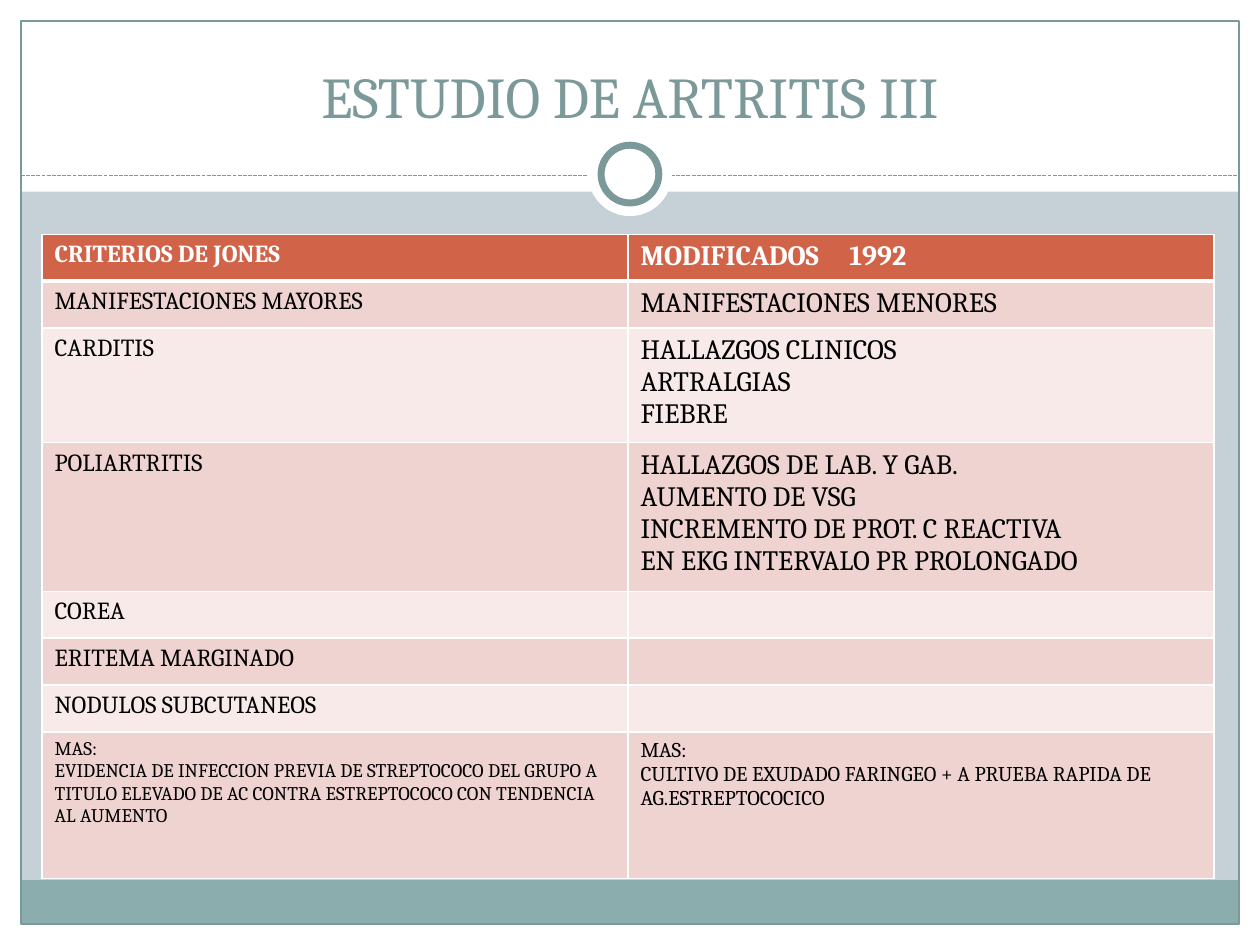
from lxml.etree import SubElement
from pptx import Presentation
from pptx.dml.color import RGBColor
from pptx.enum.dml import MSO_LINE
from pptx.enum.shapes import MSO_CONNECTOR, MSO_SHAPE
from pptx.enum.text import MSO_ANCHOR, PP_ALIGN
from pptx.oxml.ns import qn
from pptx.util import Pt


def paint(color_format, hex_color):
    color_format.rgb = RGBColor.from_string(hex_color)


def draw_border(cell, side, width):
    edge = SubElement(cell._tc.get_or_add_tcPr(), qn(f"a:ln{side}"), w=str(Pt(width)))
    fill = SubElement(edge, qn("a:solidFill"))
    SubElement(fill, qn("a:srgbClr"), val="FFFFFF")


FONT = "Cambria"
TEAL = "7C999A"
WHITE = "FFFFFF"

prs = Presentation()
prs.slide_width, prs.slide_height = Pt(720), Pt(540)
slide = prs.slides.add_slide(prs.slide_layouts[5])
slide.background.fill.solid()
paint(slide.background.fill.fore_color, "C5D1D7")

backdrop = [
    (MSO_SHAPE.RECTANGLE, 0, 528, 720, 12, WHITE, None, 0),
    (MSO_SHAPE.RECTANGLE, 0, 0, 720, 109.5, WHITE, None, 0),
    (MSO_SHAPE.RECTANGLE, 0, 0, 12, 540, WHITE, None, 0),
    (MSO_SHAPE.RECTANGLE, 708, 0, 12, 540, WHITE, None, 0),
    (MSO_SHAPE.RECTANGLE, 12, 503, 696, 25, "8CADAE", None, 0),
    (MSO_SHAPE.RECTANGLE, 12, 12, 696, 516, None, TEAL, 0.75),
]
medallion = [
    (MSO_SHAPE.OVAL, 336, 75.5, 48, 48, WHITE, None, 0),
    (MSO_SHAPE.OVAL, 343.5, 83, 33, 33, WHITE, TEAL, 4),
]
for kind, left, top, width, height, fill, outline, weight in backdrop + medallion:
    if (kind, left) == (MSO_SHAPE.OVAL, 336):
        divider = slide.shapes.add_connector(
            MSO_CONNECTOR.STRAIGHT, Pt(12), Pt(100.5), Pt(708), Pt(100.5))
        paint(divider.line.color, TEAL)
        divider.line.width = Pt(0.75)
        divider.line.dash_style = MSO_LINE.SQUARE_DOT
        SubElement(divider.element.spPr, qn("a:effectLst"))
    part = slide.shapes.add_shape(kind, Pt(left), Pt(top), Pt(width), Pt(height))
    part.shadow.inherit = False
    if fill:
        part.fill.solid()
        paint(part.fill.fore_color, fill)
    else:
        part.fill.background()
    if outline:
        paint(part.line.color, outline)
        part.line.width = Pt(weight)
    else:
        part.line.fill.background()

title = slide.shapes.title
slide.shapes.element.append(title.element)
title_box = {"left": Pt(24), "top": Pt(18), "width": Pt(672), "height": Pt(60)}
for name, value in title_box.items():
    setattr(title, name, value)
title.text_frame.text = "ESTUDIO DE ARTRITIS III"
title.text_frame.vertical_anchor = MSO_ANCHOR.BOTTOM
heading = title.text_frame.paragraphs[0]
heading.alignment = PP_ALIGN.CENTER
for name, value in {"name": FONT, "size": Pt(33), "bold": False}.items():
    setattr(heading.runs[0].font, name, value)
paint(heading.runs[0].font.color, TEAL)

criteria = [
    (26.7, "CRITERIOS DE JONES", "MODIFICADOS\t1992"),
    (26.7, "MANIFESTACIONES MAYORES", "MANIFESTACIONES MENORES"),
    (65.6, "CARDITIS", "HALLAZGOS CLINICOS\nARTRALGIAS\nFIEBRE"),
    (85, "POLIARTRITIS", "HALLAZGOS DE LAB. Y GAB.\nAUMENTO DE VSG\n"
     "INCREMENTO DE PROT. C REACTIVA\nEN EKG INTERVALO PR PROLONGADO"),
    (26.7, "COREA", ""),
    (26.7, "ERITEMA MARGINADO", ""),
    (26.7, "NODULOS SUBCUTANEOS", ""),
    (83.8, "MAS:\nEVIDENCIA DE INFECCION PREVIA DE STREPTOCOCO DEL GRUPO A\n"
     "TITULO ELEVADO DE AC CONTRA ESTREPTOCOCO CON TENDENCIA AL AUMENTO",
     "MAS:\nCULTIVO DE EXUDADO FARINGEO + A PRUEBA RAPIDA DE AG.ESTREPTOCOCICO"),
]
table_height = sum(row[0] for row in criteria)
table = slide.shapes.add_table(
    len(criteria), 2, Pt(24), Pt(134), Pt(669.6), Pt(table_height)).table
for column in table.columns:
    column.width = Pt(334.8)

for r, (height, *texts) in enumerate(criteria):
    table.rows[r].height = Pt(height)
    is_header = r == 0
    sizes = (11, 12) if r == len(criteria) - 1 else (14, 16)
    row_fill = "D16349" if is_header else ("F7EAE9", "EED3D0")[r % 2]
    for c, (text, size) in enumerate(zip(texts, sizes)):
        cell = table.cell(r, c)
        for side in "LRTB":
            thick = (is_header and side == "B") or (r == 1 and side == "T")
            draw_border(cell, side, 3 if thick else 1)
        cell.fill.solid()
        paint(cell.fill.fore_color, row_fill)
        cell.text_frame.text = text
        for paragraph in cell.text_frame.paragraphs:
            if not text:
                SubElement(paragraph._p, qn("a:endParaRPr"), sz=str(size * 100))
            for run in paragraph.runs:
                for name, value in {"name": FONT, "size": Pt(size), "bold": is_header}.items():
                    setattr(run.font, name, value)
                paint(run.font.color, WHITE if is_header else "000000")

year_tabs = SubElement(table.cell(0, 1).text_frame.paragraphs[0]._p.get_or_add_pPr(), qn("a:tabLst"))
SubElement(year_tabs, qn("a:tab"), pos=str(Pt(119.4)), algn="l")

prs.save("out.pptx")
